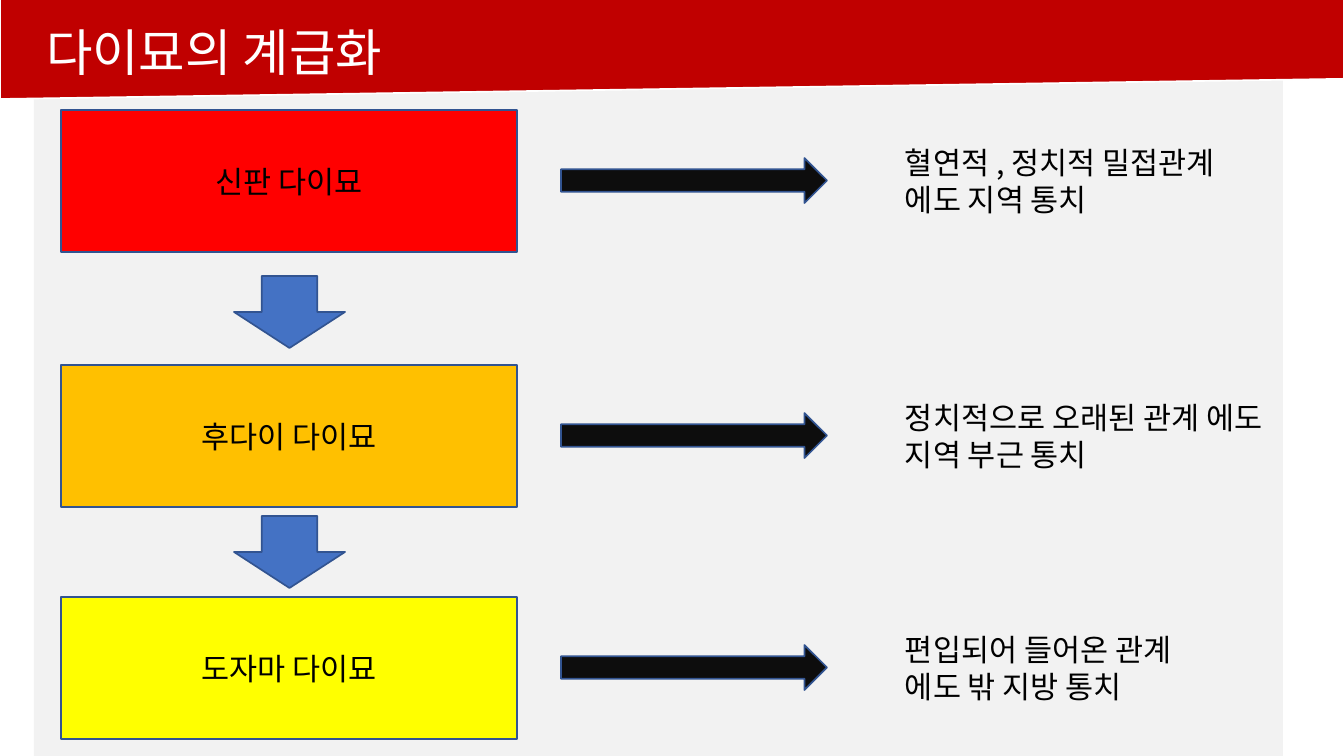
import pptx
import pptx.util
import pptx.dml.color
import pptx.enum.shapes
import pptx.enum.text
import lxml.etree

SHAPE = pptx.enum.shapes.MSO_SHAPE
ALIGN = pptx.enum.text.PP_ALIGN
ANCHOR = pptx.enum.text.MSO_ANCHOR
RGB = pptx.dml.color.RGBColor.from_string
PX = 914400 / 122

theme = {
    "font": "Noto Sans CJK KR",
    "title_size": 29.8, "body_size": 18,
    "panel": "F2F2F2", "header": "C00000", "light": "FFFFFF", "text": "000000",
    "outline": "325491", "down": "4472C4", "right": "0D0D0D",
}

prs = pptx.Presentation()
prs.slide_width, prs.slide_height = round(1344 * PX), round(756 * PX)
s = prs.slides.add_slide(prs.slide_layouts[6])


def add_block(kind, box, fill, line=None):
    sp = s.shapes.add_shape(kind, *[round(v * PX) for v in box])
    sp.shadow.inherit = False
    sp.fill.solid()
    sp.fill.fore_color.rgb = RGB(fill)
    if line:
        sp.line.color.rgb = RGB(line)
        sp.line.width = pptx.util.Pt(1)
    else:
        sp.line.fill.background()
    return sp


def write(sp, lines, size, color, align=ALIGN.LEFT, **frame):
    tf = sp.text_frame
    for name, value in frame.items():
        setattr(tf, name, value)
    for i, text in enumerate(lines):
        p = tf.add_paragraph() if i else tf.paragraphs[0]
        p.alignment = align
        r = p.add_run()
        r.text = text
        font_format = {"name": theme["font"], "size": pptx.util.Pt(size)}
        for name, value in font_format.items():
            setattr(r.font, name, value)
        r.font.color.rgb = RGB(color)
        ea = lxml.etree.SubElement(r.font._element, pptx.oxml.ns.qn("a:ea"))
        ea.set("typeface", theme["font"])


add_block(SHAPE.RECTANGLE, (34, 80, 1249, 676), theme["panel"])
header = add_block(SHAPE.FLOWCHART_MANUAL_INPUT, (0, -2, 1344, 101), theme["header"], theme["light"])
header.rotation = 180
title = s.shapes.add_textbox(*[round(v * PX) for v in (34, 15, 399, 73)])
write(title, ["다이묘의 계급화"], theme["title_size"], theme["light"], word_wrap=False)

ranks = [
    (110, "신판 다이묘", "FF0000", ["혈연적 , 정치적 밀접관계", "에도 지역 통치"]),
    (365, "후다이 다이묘", "FFC000", ["정치적으로 오래된 관계 에도 지역 부근 통치"]),
    (597, "도자마 다이묘", "FFFF00", ["편입되어 들어온 관계", "에도 밖 지방 통치"]),
]
for top, name, color, details in ranks:
    rank = add_block(SHAPE.RECTANGLE, (61, top, 456, 142), color, theme["outline"])
    write(rank, [name], theme["body_size"], theme["text"], ALIGN.CENTER,
          word_wrap=True, vertical_anchor=ANCHOR.MIDDLE)
    add_block(SHAPE.RIGHT_ARROW, (561, top + 48, 266, 45), theme["right"], theme["outline"])
    detail = s.shapes.add_textbox(*[round(v * PX) for v in (893, top + 28, 392, 87)])
    write(detail, details, theme["body_size"], theme["text"], word_wrap=True)

for top in (276, 516):
    add_block(SHAPE.DOWN_ARROW, (234, top, 111, 72), theme["down"], theme["outline"])

prs.save("out.pptx")
